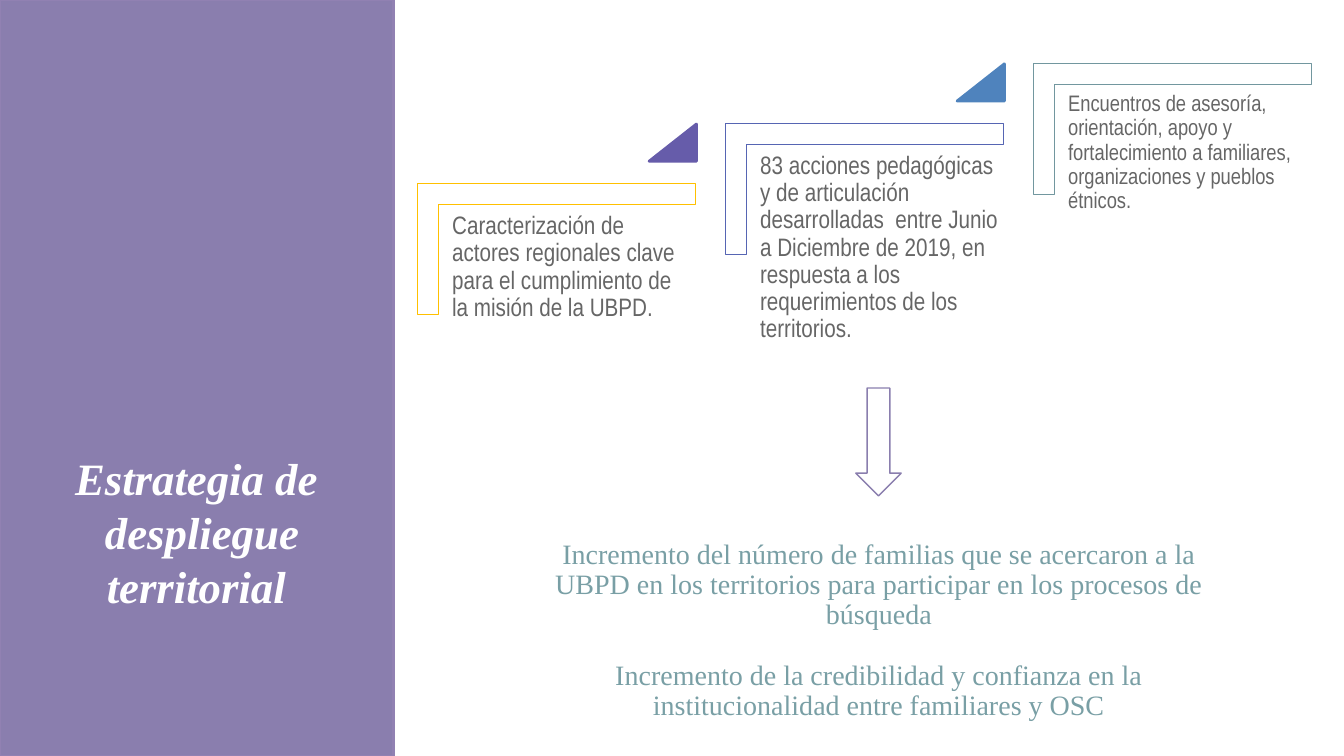
from pptx import Presentation, util as u
from pptx.dml.color import RGBColor
from pptx.enum import shapes, text

Pt = u.Pt
WHITE = RGBColor(0xFF, 0xFF, 0xFF)
PURPLE = RGBColor(0x8A, 0x7E, 0xAE)
PANEL_EDGE = RGBColor(0x91, 0x81, 0xB2)
GOLD = RGBColor(0xFF, 0xC0, 0x00)
INDIGO = RGBColor(0x56, 0x65, 0xB3)
TEAL = RGBColor(0x72, 0x97, 0x9F)
VIOLET = RGBColor(0x66, 0x5C, 0xAA)
BLUE = RGBColor(0x4F, 0x83, 0xBD)
GRAY = RGBColor(0x66, 0x66, 0x66)
SEA = RGBColor(0x79, 0x9F, 0xA5)

SERIF, NARROW = "Times New Roman", "Arial Narrow"
STEP_X, STEP_Y = 220, -43
CORNER_WIDTH, CORNER_HEIGHT = 198.7, 93.6


class StrategyPage:
    """Holds the current slide and draws its elements, in points."""

    def __init__(self, page):
        self.page = page

    def shape(self, kind, left, top, width, height, fill=None, line=None,
              weight=1, parent=None):
        box = (parent or self.page).shapes.add_shape(
            kind, Pt(left), Pt(top), Pt(width), Pt(height))
        box.shadow.inherit = False
        if fill is None:
            box.fill.background()
        else:
            box.fill.solid()
            box.fill.fore_color.rgb = fill
        box.line.color.rgb = line
        box.line.width = Pt(weight)
        return box

    def span(self, para, words, font, size, color, strong=False):
        span = para.add_run()
        span.text = words
        span.font.name = font
        span.font.size = Pt(size)
        span.font.color.rgb = color
        span.font.bold = span.font.italic = strong

    def title(self, words, left, top, width, height):
        box = self.page.shapes.title
        box.left, box.top = Pt(left), Pt(top)
        box.width, box.height = Pt(width), Pt(height)
        frame = box.text_frame
        frame.word_wrap = True
        frame.auto_size = text.MSO_AUTO_SIZE.NONE
        frame.vertical_anchor = text.MSO_ANCHOR.TOP
        frame.margin_left = frame.margin_right = Pt(9.4)
        frame.margin_top = frame.margin_bottom = 0
        para = frame.paragraphs[0]
        para.alignment = text.PP_ALIGN.CENTER
        self.span(para, words, SERIF, 32, WHITE, strong=True)
        return box

    def text_box(self, paragraphs, left, top, width, height, font, size, color,
                 align=text.PP_ALIGN.LEFT, gap=0, margin=None, parent=None):
        box = (parent or self.page).shapes.add_textbox(
            Pt(left), Pt(top), Pt(width), Pt(height))
        frame = box.text_frame
        frame.word_wrap = True
        if margin is not None:
            frame.margin_left = frame.margin_right = Pt(margin)
            frame.margin_top = frame.margin_bottom = Pt(margin)
        for index, words in enumerate(paragraphs):
            para = frame.add_paragraph() if index else frame.paragraphs[0]
            para.alignment = align
            para.line_spacing = 0.9
            para.space_before = Pt(gap if index else 0)
            self.span(para, words, font, size, color)
        return box

    def stair(self, index, words, size, height, edge, marker, group):
        left, top = 298 + index * STEP_X, 131 + index * STEP_Y
        # A quarter turn swaps width and height about the centre
        shift = (CORNER_WIDTH - CORNER_HEIGHT) / 2
        corner = self.shape(shapes.MSO_SHAPE.CORNER, left + shift, top - shift,
                            CORNER_HEIGHT, CORNER_WIDTH, line=edge,
                            weight=0.25, parent=group)
        corner.rotation = 90
        corner.adjustments[0] = corner.adjustments[1] = 0.16
        self.text_box([words], left + 20, top + 16, 180, height, NARROW, size,
                      GRAY, margin=5, parent=group)
        if marker is not None:
            triangle = self.shape(shapes.MSO_SHAPE.ISOSCELES_TRIANGLE,
                                  left + 165.7, top - 42.4, 33.8, 26.6,
                                  fill=marker, line=marker, weight=2,
                                  parent=group)
            triangle.adjustments[0] = 1


def main():
    deck = Presentation()
    deck.slide_width, deck.slide_height = Pt(960), Pt(540)
    page = StrategyPage(deck.slides.add_slide(deck.slide_layouts[5]))

    # Side panel with the title in front
    panel = page.shape(shapes.MSO_SHAPE.RECTANGLE, 0, 0, 281, 540,
                       fill=PURPLE, line=PANEL_EDGE, weight=2)
    title = page.title("Estrategia de  despliegue territorial",
                       41, 322, 198.7, 148.3)
    panel.element.addnext(title.element)

    # Rising stairs
    stairs = [
        ("Caracterización de actores regionales clave para el cumplimiento "
         "de la misión de la UBPD.", 18, 123, GOLD, VIOLET),
        ("83 acciones pedagógicas y de articulación desarrolladas  entre "
         "Junio a Diciembre de 2019, en respuesta a los requerimientos de "
         "los territorios.", 18, 150.5, INDIGO, BLUE),
        ("Encuentros de asesoría, orientación, apoyo y fortalecimiento a "
         "familiares, organizaciones y pueblos étnicos.", 16, 142, TEAL, None),
    ]
    group = page.page.shapes.add_group_shape()
    for index, stair in enumerate(stairs):
        page.stair(index, *stair, group)

    # Results below the arrow
    results = page.text_box(
        ["Incremento del número de familias que se acercaron a la UBPD en los "
         "territorios para participar en los procesos de búsqueda",
         "Incremento de la credibilidad y confianza en la institucionalidad "
         "entre familiares y OSC"],
        365.8, 382.3, 524, 116.6, SERIF, 20, SEA,
        align=text.PP_ALIGN.CENTER, gap=21.5)
    results.text_frame.auto_size = text.MSO_AUTO_SIZE.SHAPE_TO_FIT_TEXT
    page.shape(shapes.MSO_SHAPE.DOWN_ARROW, 611.3, 277.2, 32.4, 77, line=PURPLE)

    deck.save("out.pptx")


if __name__ == "__main__":
    main()
